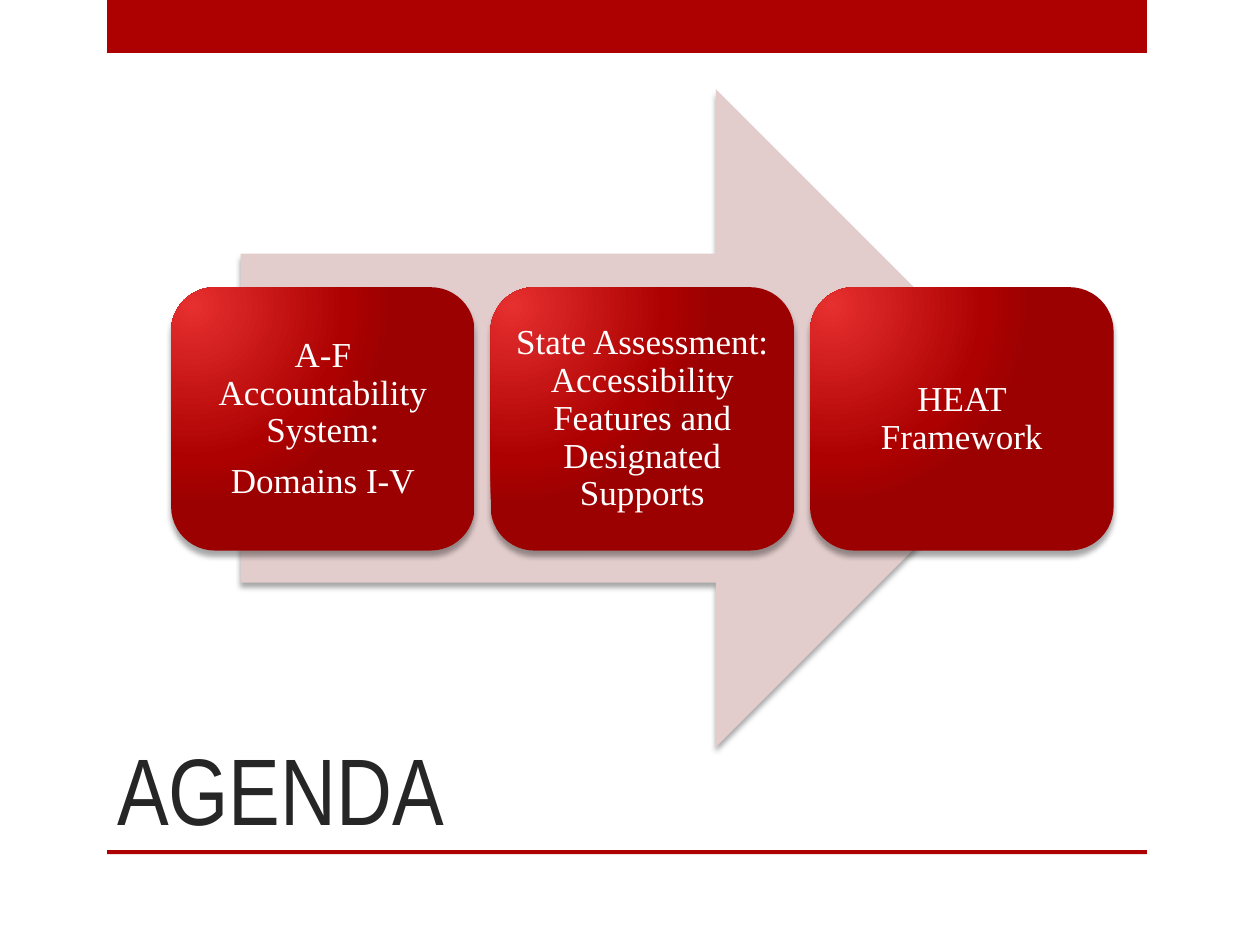
from pptx import Presentation
from pptx.dml.color import RGBColor
from pptx.enum.shapes import MSO_SHAPE
from pptx.enum.text import MSO_ANCHOR, PP_ALIGN
from pptx.oxml import parse_xml
from pptx.oxml.ns import nsdecls, qn
from pptx.util import Cm, Pt

RED = RGBColor(0xAD, 0x01, 0x01)
GLOW = RGBColor(0xE6, 0x2F, 0x2F)
DEEP = RGBColor(0x9C, 0x01, 0x01)
PINK = RGBColor(0xE3, 0xCC, 0xCC)
INK = RGBColor(0x26, 0x26, 0x26)
WHITE = RGBColor(0xFF, 0xFF, 0xFF)

deck = Presentation()
deck.slide_width, deck.slide_height = Cm(25.4), Cm(19.05)
slide = deck.slides.add_slide(deck.slide_layouts[6])


def draw(kind, box, fill):
    shape = slide.shapes.add_shape(kind, *(Cm(n) for n in box))
    shape.fill.solid()
    shape.fill.fore_color.rgb = fill
    shape.line.fill.background()
    shape.shadow.inherit = False
    return shape


def shade(shape):
    props = shape._element.spPr
    props.find(qn("a:effectLst")).append(parse_xml(
        f'<a:outerShdw {nsdecls("a")} blurRad="38100" dist="38100" '
        'dir="5400000" rotWithShape="0"><a:srgbClr val="000000">'
        '<a:alpha val="35000"/></a:srgbClr></a:outerShdw>'))


# Top bar and rule under the title
for top, height in ((0, 1.07), (17.14, 0.08)):
    draw(MSO_SHAPE.RECTANGLE, (2.16, top, 20.96, height), RED)

# Title
title = slide.shapes.add_textbox(Cm(2.11), Cm(12.7), Cm(18.85), Cm(4.45))
frame = title.text_frame
frame.word_wrap = True
frame.vertical_anchor = MSO_ANCHOR.BOTTOM
frame.text = "AGENDA"
font = frame.paragraphs[0].runs[0].font
font.name, font.size = "Arial Narrow", Pt(54)
font.color.rgb = INK

# Arrow behind the cards
shade(draw(MSO_SHAPE.RIGHT_ARROW, (4.85, 1.8, 16.21, 13.26), PINK))

# Agenda cards
cards = (
    ("A-F Accountability System:", "Domains I-V"),
    ("State Assessment: Accessibility Features and Designated Supports",),
    ("HEAT Framework",),
)
stops = "".join(
    f'<a:gs pos="{spot * 1000}"><a:srgbClr val="{tone}"/></a:gs>'
    for spot, tone in ((0, GLOW), (76, RED), (100, DEEP)))
body = {"word_wrap": True, "vertical_anchor": MSO_ANCHOR.MIDDLE,
        "margin_left": Cm(0.2), "margin_right": Cm(0.2),
        "margin_top": Cm(0.2), "margin_bottom": Cm(0.2)}
para = {"alignment": PP_ALIGN.CENTER, "line_spacing": 0.9,
        "space_after": Pt(7)}

for i, lines in enumerate(cards):
    card = draw(MSO_SHAPE.ROUNDED_RECTANGLE,
                (3.45 + 6.44 * i, 5.79, 6.12, 5.31), RED)
    shade(card)

    # Glow from the upper left corner
    props = card._element.spPr
    props.replace(props.find(qn("a:solidFill")), parse_xml(
        f'<a:gradFill {nsdecls("a")} rotWithShape="1">'
        f'<a:gsLst>{stops}</a:gsLst><a:path path="circle">'
        '<a:fillToRect l="15000" t="15000" r="100000" b="100000"/>'
        '</a:path></a:gradFill>'))

    # Card text
    frame = card.text_frame
    for key, value in body.items():
        setattr(frame, key, value)
    frame.text = "\n".join(lines)
    for line in frame.paragraphs:
        for key, value in para.items():
            setattr(line, key, value)
        font = line.runs[0].font
        font.name, font.size = "Times New Roman", Pt(20)
        font.color.rgb = WHITE

deck.save("out.pptx")
